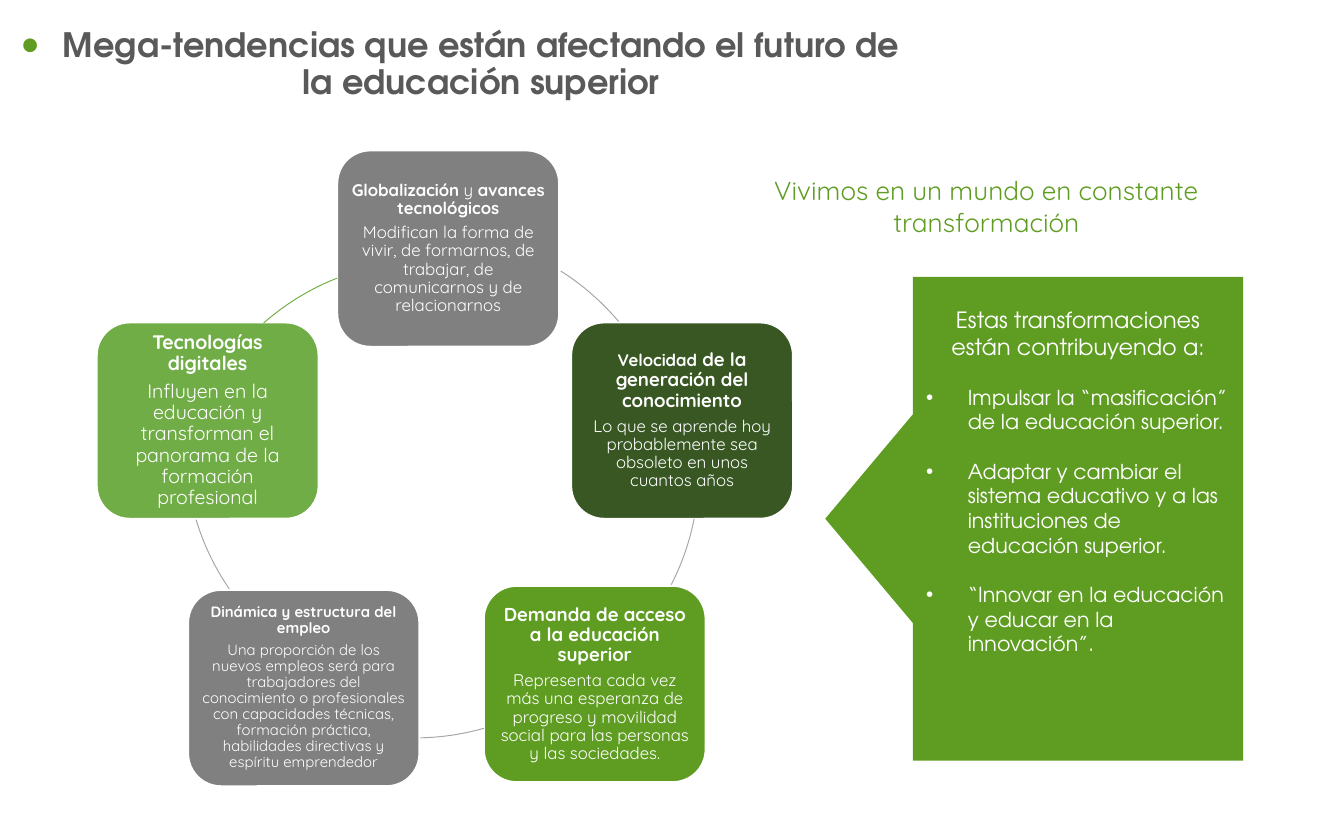
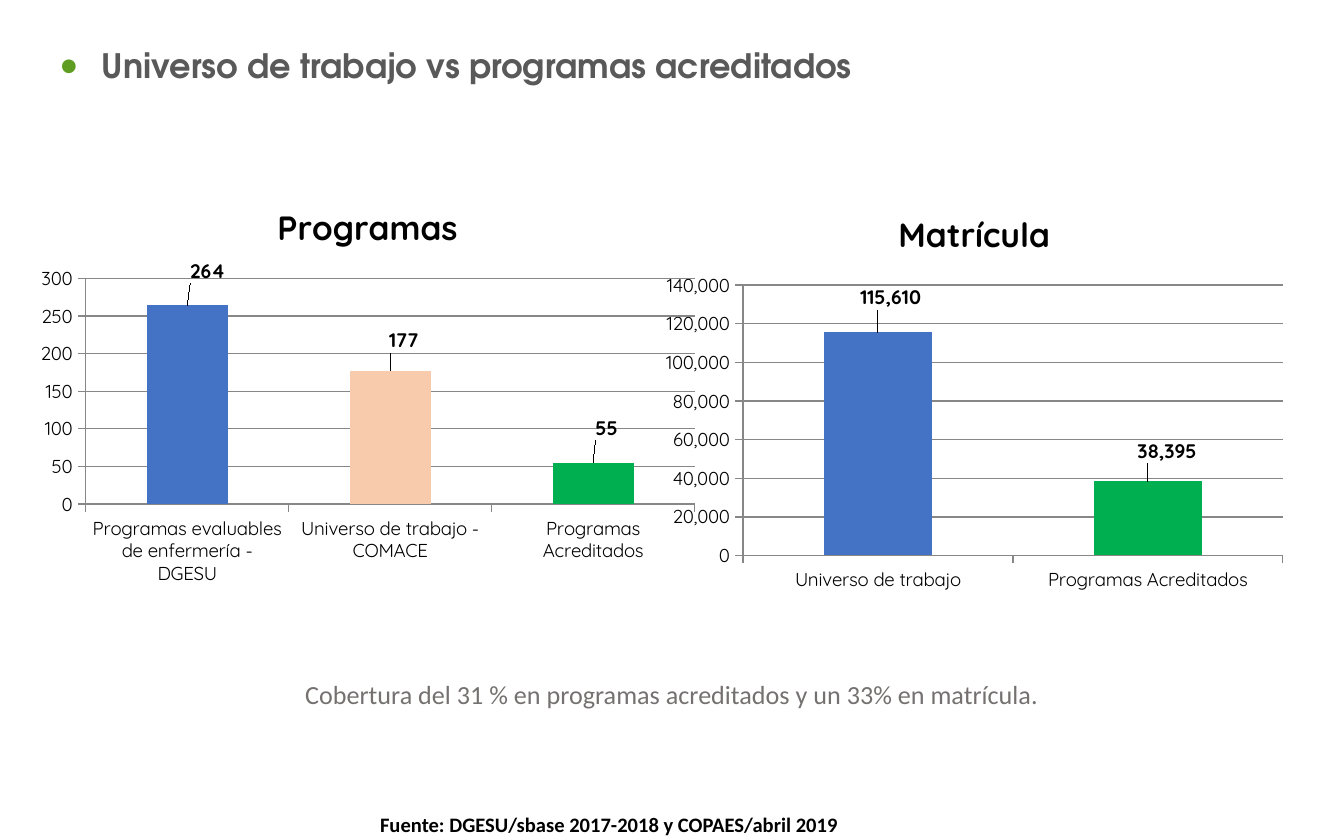
from math import atan2, degrees

from lxml import etree
from pptx import Presentation
from pptx import util as u
from pptx.chart import data as chart_data
from pptx.dml.color import RGBColor
from pptx.enum import chart as charts, shapes, text
from pptx.oxml import parse_xml
from pptx.oxml.ns import nsdecls, qn

PX = 9144  # 100 px to the inch

GREEN = RGBColor(0x5F, 0x9D, 0x22)
LIGHT_GREEN = RGBColor(0x70, 0xAD, 0x47)
DARK_GREEN = RGBColor(0x38, 0x57, 0x23)
BRIGHT_GREEN = RGBColor(0x00, 0xB0, 0x50)
BLUE = RGBColor(0x44, 0x72, 0xC4)
PEACH = RGBColor(0xF8, 0xCB, 0xAD)
GRAY = RGBColor(0x80, 0x80, 0x80)
ARC_GRAY = RGBColor(0xA5, 0xA5, 0xA5)
TITLE_GRAY = RGBColor(0x59, 0x59, 0x59)
NOTE_GRAY = RGBColor(0x76, 0x71, 0x71)
BLACK = RGBColor(0, 0, 0)
WHITE = RGBColor(0xFF, 0xFF, 0xFF)

HEADING_FONT = "TeX Gyre Adventor"
BODY_FONT = "Quicksand"
NOTE_FONT = "Calibri"
LEFT, CENTER = text.PP_ALIGN.LEFT, text.PP_ALIGN.CENTER
TOP, MIDDLE = text.MSO_ANCHOR.TOP, text.MSO_ANCHOR.MIDDLE
HANGING = 31

# Box, fill, inset, heading spans and body span; a span is (words, size, bold)
CARDS = [
    ((251, 112, 165, 146), GRAY, 3,
     [("Globalización", 9, True), (" y ", 9, False), ("avances tecnológicos", 9, True)],
     ("Modifican la forma de vivir, de formarnos, de trabajar, de comunicarnos "
      "y de relacionarnos", 9, False)),
    ((425, 240, 165, 146), DARK_GREEN, 4,
     [("Velocidad", 9, True), (" de la generación del conocimiento", 10, True)],
     ("Lo que se aprende hoy probablemente sea obsoleto en unos cuantos años", 9, False)),
    ((360, 436, 165, 146), GREEN, 4,
     [("Demanda de acceso a la educación superior", 10, True)],
     ("Representa cada vez más una esperanza de progreso y movilidad social para "
      "las personas y las sociedades.", 9, False)),
    ((140, 439, 172, 146), GRAY, 3,
     [("Dinámica y estructura del empleo", 8, True)],
     ("Una proporción de los nuevos empleos será para trabajadores del conocimiento "
      "o profesionales con capacidades técnicas, formación práctica, habilidades "
      "directivas y espíritu emprendedor", 8, False)),
    ((72, 240, 165, 146), LIGHT_GREEN, 5,
     [("Tecnologías digitales", 10.5, True)],
     ("Influyen en la educación y transforman el panorama de la formación profesional",
      10.5, False)),
]

# Circle centre, start, end and colour, clockwise between cards
RADIUS = 186
ARCS = [
    ((318, 359), (417, 202), (460, 240), ARC_GRAY),
    ((334, 350), (517, 386), (499, 435), ARC_GRAY),
    ((309, 363), (360, 542), (312, 549), ARC_GRAY),
    ((324, 333), (171, 438), (146, 386), ARC_GRAY),
    ((319, 380), (196, 240), (251, 207), LIGHT_GREEN),
]

CALLOUT_HEADING = "Estas transformaciones están contribuyendo a:"
CALLOUT_POINTS = [
    "Impulsar la “masificación” de la educación superior.",
    "Adaptar y cambiar el sistema educativo y a las instituciones de educación superior.",
    "“Innovar en la educación y educar en la innovación”.",
]

# Bars: category, value, colour, label shift as shares of the chart
CHARTS = [
    ("Matrícula", (486, 140, 478, 306), "#,##0", [
        ("Universo de trabajo", 115610, BLUE, (0.02, -0.04)),
        ("Programas Acreditados", 38395, BRIGHT_GREEN, (0.03, -0.03)),
    ]),
    ("Programas", (20, 135, 507, 306), "General", [
        ("Programas evaluables de enfermería - DGESU", 264, BLUE, (0.03, -0.04)),
        ("Universo de trabajo - COMACE", 177, PEACH, (0.02, -0.03)),
        ("Programas Acreditados", 55, BRIGHT_GREEN, (0.02, -0.04)),
    ]),
]


def place(box):
    return [side * PX for side in box]


def set_font(font, name, size, color, bold=False):
    font.name, font.size, font.bold = name, u.Pt(size), bold
    font.color.rgb = color


def set_bullet(para, color=None, percent=None):
    props = para._p.get_or_add_pPr()
    props.set("marL", str(HANGING * PX))
    props.set("indent", str(-HANGING * PX))
    if color is not None:
        holder = etree.SubElement(props, qn("a:buClr"))
        etree.SubElement(holder, qn("a:srgbClr"), val=str(color))
    if percent:
        etree.SubElement(props, qn("a:buSzPct"), val=str(percent * 1000))
    etree.SubElement(props, qn("a:buFont"), typeface="Arial")
    etree.SubElement(props, qn("a:buChar"), char="•")


def add_paragraph(frame, spans, font, color, align=LEFT):
    para = frame.paragraphs[0] if not frame.paragraphs[0].runs else frame.add_paragraph()
    para.alignment = align
    for words, size, bold in spans:
        span = para.add_run()
        span.text = words
        set_font(span.font, font, size, color, bold)
    return para


def add_text_box(slide, box, span, font, color, align=LEFT, anchor=TOP):
    frame = slide.shapes.add_textbox(*place(box)).text_frame
    frame.word_wrap = True
    frame.vertical_anchor = anchor
    return add_paragraph(frame, [span], font, color, align)


def add_title(slide, box, words, align=LEFT, anchor=TOP):
    para = add_text_box(slide, box, (words, 18, True), HEADING_FONT, TITLE_GRAY, align, anchor)
    para.line_spacing = 0.9
    set_bullet(para, GREEN, 150)


def add_filled_shape(slide, kind, box, fill):
    shape = slide.shapes.add_shape(kind, *place(box))
    shape.shadow.inherit = False
    shape.fill.solid()
    shape.fill.fore_color.rgb = fill
    shape.text_frame.word_wrap = True
    return shape


def add_card(slide, box, fill, inset, heading, body):
    card = add_filled_shape(slide, shapes.MSO_SHAPE.ROUNDED_RECTANGLE, box, fill)
    card.line.color.rgb = WHITE
    card.line.width = u.Pt(1)
    frame = card.text_frame
    frame.vertical_anchor = MIDDLE
    frame.margin_left = frame.margin_right = inset * PX
    frame.margin_top = frame.margin_bottom = inset * PX
    for spans in (heading, [body]):
        para = add_paragraph(frame, spans, BODY_FONT, WHITE, CENTER)
        para.line_spacing = 0.9
        para.space_after = u.Pt(0.35 * spans[-1][1])


def add_arc(slide, center, start, end, color):
    box = (center[0] - RADIUS, center[1] - RADIUS, 2 * RADIUS, 2 * RADIUS)
    arc = slide.shapes.add_shape(shapes.MSO_SHAPE.ARC, *place(box))
    for index, (x, y) in enumerate((start, end)):
        angle = degrees(atan2(y - center[1], x - center[0])) % 360
        arc.adjustments[index] = angle * 0.6  # 60,000 units to the degree
    arc.shadow.inherit = False
    arc.fill.background()
    arc.line.color.rgb = color
    arc.line.width = u.Pt(0.5)


def add_callout(slide):
    callout = add_filled_shape(slide, shapes.MSO_SHAPE.LEFT_ARROW_CALLOUT,
                               (614, 206, 311, 360), GREEN)
    callout.line.fill.background()
    for index, value in enumerate((0.08, 0.25, 0.21, 0.84)):
        callout.adjustments[index] = value
    frame = callout.text_frame
    frame.vertical_anchor = TOP
    frame.margin_top = 22 * PX
    add_paragraph(frame, [(CALLOUT_HEADING, 12, False)], HEADING_FONT, WHITE, CENTER)
    for point in CALLOUT_POINTS:
        para = add_paragraph(frame, [(point, 11, False)], HEADING_FONT, WHITE)
        para.space_before = u.Pt(13.2)
        set_bullet(para)


def shift_labels(series, shifts):
    """Move each data label off its bar and join it with a leader line."""
    for label, (x, y) in zip(series._element.iter(qn("c:dLbl")), shifts):
        label.insert(1, parse_xml(
            f'<c:layout {nsdecls("c")}><c:manualLayout>'
            f'<c:x val="{x}"/><c:y val="{y}"/></c:manualLayout></c:layout>'))
    series._element.find(qn("c:dLbls")).append(parse_xml(
        f'<c:extLst {nsdecls("c")}><c:ext uri="{{CE6537A1-D6FC-4f65-9D91-7224C49458BB}}" '
        'xmlns:c15="http://schemas.microsoft.com/office/drawing/2012/chart">'
        '<c15:showLeaderLines val="1"/></c:ext></c:extLst>'))


def add_bar_chart(slide, title, box, number_format, bars):
    categories, values, colors, shifts = zip(*bars)
    source = chart_data.CategoryChartData(number_format=number_format)
    source.categories = categories
    source.add_series(title, values)
    chart = slide.shapes.add_chart(charts.XL_CHART_TYPE.COLUMN_CLUSTERED,
                                   *place(box), source).chart
    set_font(chart.font, BODY_FONT, 10, BLACK)
    chart.has_legend = False
    chart.has_title = True
    span = chart.chart_title.text_frame.paragraphs[0].add_run()
    span.text = title
    set_font(span.font, BODY_FONT, 18, BLACK, True)
    chart.chart_title.include_in_layout = False

    for axis in (chart.category_axis, chart.value_axis):
        axis.major_tick_mark = charts.XL_TICK_MARK.OUTSIDE
    chart.value_axis.has_major_gridlines = True
    chart.value_axis.tick_labels.number_format = number_format
    chart.value_axis.tick_labels.number_format_is_linked = False

    plot = chart.plots[0]
    plot.gap_width = 150
    plot.vary_by_categories = False
    series = plot.series[0]
    series.format.fill.solid()
    series.format.fill.fore_color.rgb = BLUE
    for index, color in enumerate(colors):
        point = series.points[index]
        point.format.fill.solid()
        point.format.fill.fore_color.rgb = color
        set_font(point.data_label.font, BODY_FONT, 10.5, BLACK, True)
        point.data_label.position = charts.XL_LABEL_POSITION.OUTSIDE_END
    shift_labels(series, shifts)


def build_trends(slide):
    add_title(slide, (0, 0, 685, 97),
              "Mega-tendencias que están afectando el futuro de la educación superior",
              CENTER, MIDDLE)
    add_text_box(slide, (529, 125, 410, 57),
                 ("Vivimos en un mundo en constante transformación", 14, False),
                 BODY_FONT, GREEN, CENTER)
    for card, arc in zip(CARDS, ARCS):
        add_card(slide, *card)
        add_arc(slide, *arc)
    add_callout(slide)


def build_programs(slide):
    add_title(slide, (35, 32, 716, 82), "Universo de trabajo vs programas acreditados")
    add_text_box(slide, (64, 500, 872, 34),
                 ("Cobertura del 31 % en programas acreditados y un 33% en matrícula.", 14, False),
                 NOTE_FONT, NOTE_GRAY, CENTER)
    for chart in CHARTS:
        add_bar_chart(slide, *chart)
    add_text_box(slide, (273, 599, 743, 29),
                 ("Fuente: DGESU/sbase 2017-2018 y COPAES/abril 2019", 11, True),
                 NOTE_FONT, BLACK)


def main():
    deck = Presentation()
    deck.slide_width, deck.slide_height = 1000 * PX, 625 * PX
    for build in (build_trends, build_programs):
        build(deck.slides.add_slide(deck.slide_layouts[6]))
    deck.save("out.pptx")


if __name__ == "__main__":
    main()
